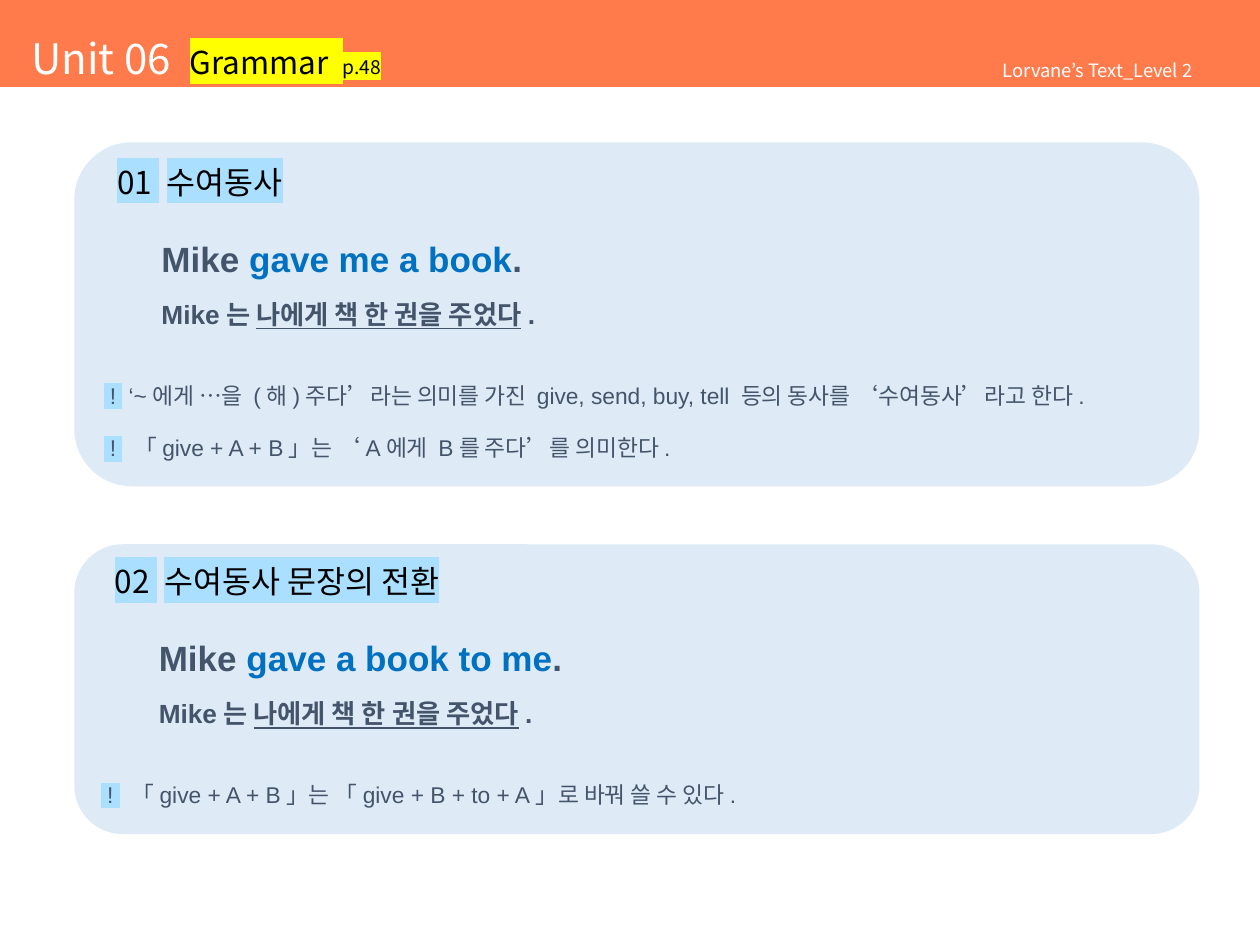
from dataclasses import dataclass

from lxml import etree
from pptx import Presentation
from pptx.dml.color import RGBColor
from pptx.enum.shapes import MSO_SHAPE
from pptx.enum.text import MSO_ANCHOR, PP_ALIGN
from pptx.oxml.ns import qn
from pptx.util import Inches, Pt

RECTANGLE = MSO_SHAPE.RECTANGLE
ROUNDED = MSO_SHAPE.ROUNDED_RECTANGLE
TOP = MSO_ANCHOR.TOP
BOTTOM = MSO_ANCHOR.BOTTOM
LEFT = PP_ALIGN.LEFT

KOREAN_FONT = "Noto Sans CJK KR"
LATIN_FONT = "Arial"
COLORS = {
    "banner": "FF7B4B",
    "panel": "DEEBF7",
    "white": "FFFFFF",
    "black": "000000",
    "slate": "44546A",
    "blue": "0070C0",
    "yellow": "FFFF00",
    "sky": "ABDFFF",
}


@dataclass
class GrammarPanel:
    top: float
    height: float
    heading: str
    phrase: str
    notes: tuple[str, ...]


PANELS = (
    GrammarPanel(
        1.13, 2.73, "01 수여동사", "gave me a book",
        (
            "‘~에게 …을 (해)주다’라는 의미를 가진 give, send, buy, tell 등의 동사를 ‘수여동사’라고 한다.",
            "「give + A + B」는 ‘A에게 B를 주다’를 의미한다.",
        ),
    ),
    GrammarPanel(
        4.32, 2.3, "02 수여동사 문장의 전환", "gave a book to me",
        ("「give + A + B」는 「give + B + to + A」로 바꿔 쓸 수 있다.",),
    ),
)


def add_text(paragraph, text: str, *, size: float, color: str = "slate",
             font: str = LATIN_FONT, bold: bool = False,
             underline: bool = False, highlight: str = "") -> None:
    run = paragraph.add_run()
    run.text = text
    run.font.size = Pt(size)
    run.font.bold = bold
    run.font.underline = underline
    run.font.color.rgb = RGBColor.from_string(COLORS[color])
    run.font.name = font
    latin = run.font._element.find(qn("a:latin"))
    east_asian = etree.Element(qn("a:ea"), typeface=KOREAN_FONT)
    latin.addnext(east_asian)
    if highlight:
        marker = etree.Element(qn("a:highlight"))
        etree.SubElement(marker, qn("a:srgbClr"), val=COLORS[highlight])
        latin.addprevious(marker)


def add_block(slide, kind, left: float, top: float, width: float,
              height: float, color: str, anchor):
    shape = slide.shapes.add_shape(
        kind, Inches(left), Inches(top), Inches(width), Inches(height))
    shape.shadow.inherit = False
    shape.fill.solid()
    shape.fill.fore_color.rgb = RGBColor.from_string(COLORS[color])
    shape.line.fill.background()
    frame = shape.text_frame
    frame.word_wrap = True
    frame.vertical_anchor = anchor
    return shape


def add_line(frame, *, height: float, before: float = 0, indent: float = 0):
    first = frame.paragraphs[0]
    paragraph = frame.add_paragraph() if first.runs else first
    paragraph.alignment = LEFT
    paragraph.line_spacing = Pt(height)
    paragraph.space_before = Pt(before)
    properties = paragraph._p.get_or_add_pPr()
    properties.set("marL", str(Inches(indent)))
    properties.set("indent", "0")
    return paragraph


def draw_banner(slide) -> None:
    banner = add_block(slide, RECTANGLE, 0, 0, 10, 0.69, "banner", BOTTOM)
    frame = banner.text_frame
    frame.margin_left = Inches(0.25)
    frame.margin_top = 0
    frame.margin_bottom = Inches(0.03)
    title = add_line(frame, height=32)
    add_text(title, "Unit 06  ", size=24, color="white", font=KOREAN_FONT)
    add_text(title, "Grammar  ", size=18, color="black", font=KOREAN_FONT,
             highlight="yellow")
    add_text(title, "p.48", size=11, color="black", font=KOREAN_FONT,
             highlight="yellow")

    caption = slide.shapes.add_textbox(
        Inches(7.89), Inches(0.45), Inches(1.93), Inches(0.26)).text_frame
    caption.word_wrap = True
    caption.margin_left = caption.margin_right = Inches(0.07)
    caption.margin_top = caption.margin_bottom = Inches(0.04)
    paragraph = caption.paragraphs[0]
    paragraph.line_spacing = 0.9
    add_text(paragraph, "Lorvane’s Text_Level 2", size=10.5, color="white",
             font=KOREAN_FONT)


def draw_panel(slide, panel: GrammarPanel) -> None:
    shape = add_block(
        slide, ROUNDED, 0.59, panel.top, 8.93, panel.height, "panel", TOP)
    shape.adjustments[0] = 0.167
    frame = shape.text_frame

    heading = add_line(frame, height=20, indent=0.11)
    add_text(heading, panel.heading, size=18, color="black",
             font=KOREAN_FONT, highlight="sky")

    english = add_line(frame, height=24, before=21, indent=0.46)
    add_text(english, "Mike ", size=20, bold=True)
    add_text(english, panel.phrase, size=20, color="blue", bold=True)
    add_text(english, ".", size=20, bold=True)

    korean = add_line(frame, height=18, before=11, indent=0.46)
    add_text(korean, "Mike는 ", size=15, bold=True)
    add_text(korean, "나에게 책 한 권을 주었다", size=15, bold=True,
             underline=True)
    add_text(korean, ".", size=15, bold=True)

    for index, note in enumerate(panel.notes):
        line = add_line(frame, height=24, before=6 if index else 21)
        add_text(line, " ! ", size=13, highlight="sky")
        add_text(line, f" {note}", size=13)


def main() -> None:
    presentation = Presentation()
    presentation.slide_width = Inches(10)
    presentation.slide_height = Inches(7.5)
    slide = presentation.slides.add_slide(presentation.slide_layouts[6])
    draw_banner(slide)
    for panel in PANELS:
        draw_panel(slide, panel)
    presentation.save("out.pptx")


if __name__ == "__main__":
    main()
